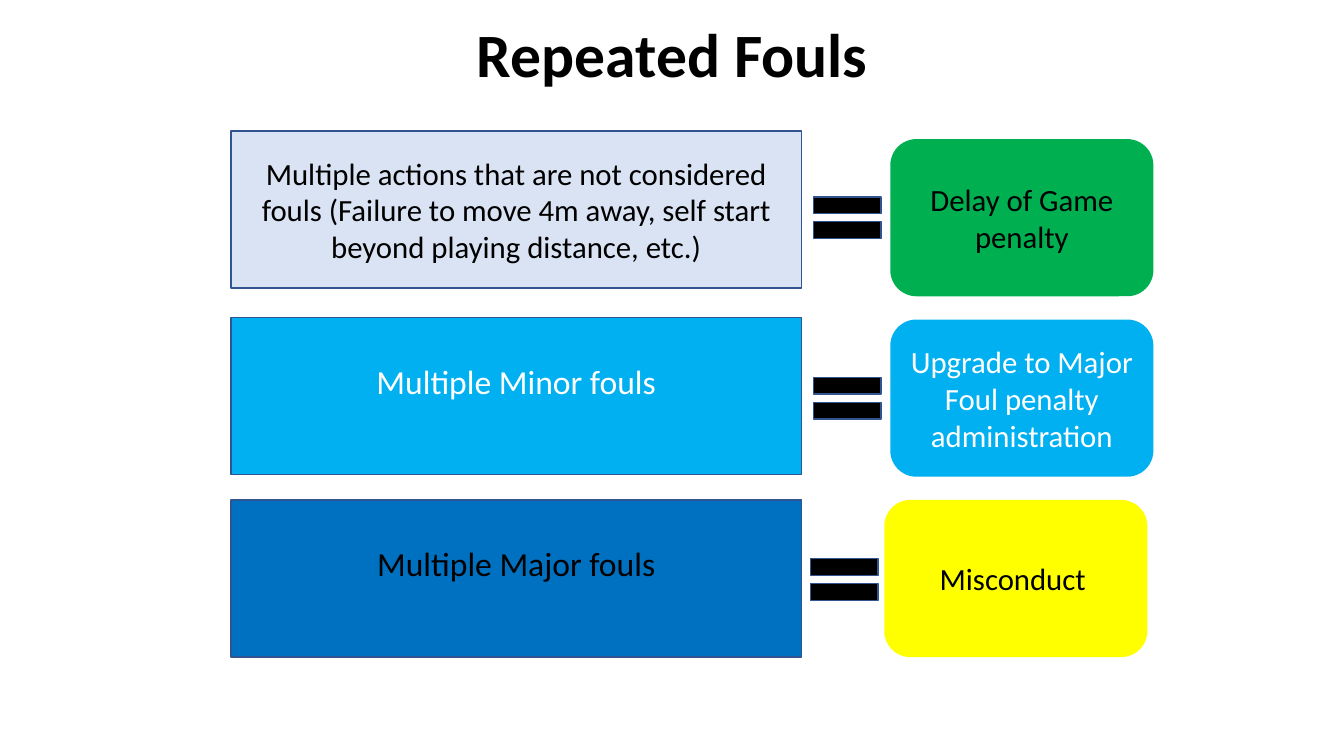
from dataclasses import dataclass

import pptx
import pptx.dml.color
import pptx.enum.shapes
import pptx.enum.text
import pptx.util
from pptx.dml.color import RGBColor
from pptx.enum.shapes import MSO_SHAPE
from pptx.util import Inches

BLACK = RGBColor(0x00, 0x00, 0x00)
WHITE = RGBColor(0xFF, 0xFF, 0xFF)
PALE_BLUE = RGBColor(0xDA, 0xE3, 0xF3)
SKY_BLUE = RGBColor(0x00, 0xB0, 0xF0)
DEEP_BLUE = RGBColor(0x00, 0x70, 0xC0)
OUTLINE_BLUE = RGBColor(0x32, 0x54, 0x91)
GREEN = RGBColor(0x00, 0xB0, 0x50)
YELLOW = RGBColor(0xFF, 0xFF, 0x00)

FOUL_LEFT, FOUL_WIDTH = 2.29, 5.66
PENALTY_WIDTH = 2.61
ROW_HEIGHT = 1.56
EQUAL_WIDTH, EQUAL_HEIGHT = 0.91, 0.7


@dataclass
class Label:
    text: str
    fill: RGBColor
    color: RGBColor
    left: float
    top: float
    size: int = 22
    right_inset: float = 0.1
    bottom_inset: float = 0.05


@dataclass
class Rule:
    foul: Label
    penalty: Label
    equal_left: float
    equal_top: float


RULES = [
    Rule(
        Label("Multiple actions that are not considered fouls (Failure to move 4m away, "
              "self start beyond playing distance, etc.)", PALE_BLUE, BLACK, FOUL_LEFT, 1.3),
        Label("Delay of Game penalty", GREEN, BLACK, 8.83, 1.38),
        7.95, 1.81,
    ),
    Rule(
        Label("Multiple Minor fouls", SKY_BLUE, WHITE, FOUL_LEFT, 3.15,
              size=24, bottom_inset=0.35),
        Label("Upgrade to Major Foul penalty administration", SKY_BLUE, WHITE, 8.83, 3.17),
        7.95, 3.6,
    ),
    Rule(
        Label("Multiple Major fouls", DEEP_BLUE, BLACK, FOUL_LEFT, 4.96,
              size=24, bottom_inset=0.35),
        Label("Misconduct", YELLOW, BLACK, 8.77, 4.96, right_inset=0.16),
        7.92, 5.4,
    ),
]


def write_text(shape, text: str, *, size: int, color: RGBColor, bold: bool = False,
               line_spacing: float = 1.0, right_inset: float = 0.1,
               bottom_inset: float = 0.05) -> None:
    frame = shape.text_frame
    frame.word_wrap = True
    frame.vertical_anchor = pptx.enum.text.MSO_ANCHOR.MIDDLE
    frame.margin_right = Inches(right_inset)
    frame.margin_bottom = Inches(bottom_inset)
    para = frame.paragraphs[0]
    para.alignment = pptx.enum.text.PP_ALIGN.CENTER
    para.line_spacing = line_spacing
    span = para.add_run()
    span.text = text
    span.font.name = "Calibri"
    span.font.size = pptx.util.Pt(size)
    span.font.bold = bold
    span.font.color.rgb = color


def add_block(page, kind: MSO_SHAPE, left: float, top: float, width: float, height: float,
              fill: RGBColor, outlined: bool = True):
    shape = page.shapes.add_shape(
        kind, Inches(left), Inches(top), Inches(width), Inches(height))
    shape.shadow.inherit = False
    shape.fill.solid()
    shape.fill.fore_color.rgb = fill
    if outlined:
        shape.line.color.rgb = OUTLINE_BLUE
        shape.line.width = pptx.util.Pt(1)
    else:
        shape.line.fill.background()
    return shape


def add_label(page, label: Label, kind: MSO_SHAPE, width: float, outlined: bool) -> None:
    shape = add_block(page, kind, label.left, label.top, width, ROW_HEIGHT,
                      label.fill, outlined)
    write_text(shape, label.text, size=label.size, color=label.color,
               right_inset=label.right_inset, bottom_inset=label.bottom_inset)


def add_rule(page, rule: Rule) -> None:
    add_label(page, rule.foul, MSO_SHAPE.RECTANGLE, FOUL_WIDTH, True)
    add_label(page, rule.penalty, MSO_SHAPE.ROUNDED_RECTANGLE, PENALTY_WIDTH, False)
    add_block(page, MSO_SHAPE.MATH_EQUAL, rule.equal_left, rule.equal_top,
              EQUAL_WIDTH, EQUAL_HEIGHT, BLACK)


def main() -> None:
    deck = pptx.Presentation()
    deck.slide_width = Inches(13.33)
    deck.slide_height = Inches(7.5)
    page = deck.slides.add_slide(deck.slide_layouts[6])
    title = page.shapes.add_textbox(Inches(2.93), Inches(0.14), Inches(7.48), Inches(0.86))
    write_text(title, "Repeated Fouls", size=44, color=BLACK, bold=True, line_spacing=0.9)
    for rule in RULES:
        add_rule(page, rule)
    deck.save("out.pptx")


if __name__ == "__main__":
    main()
